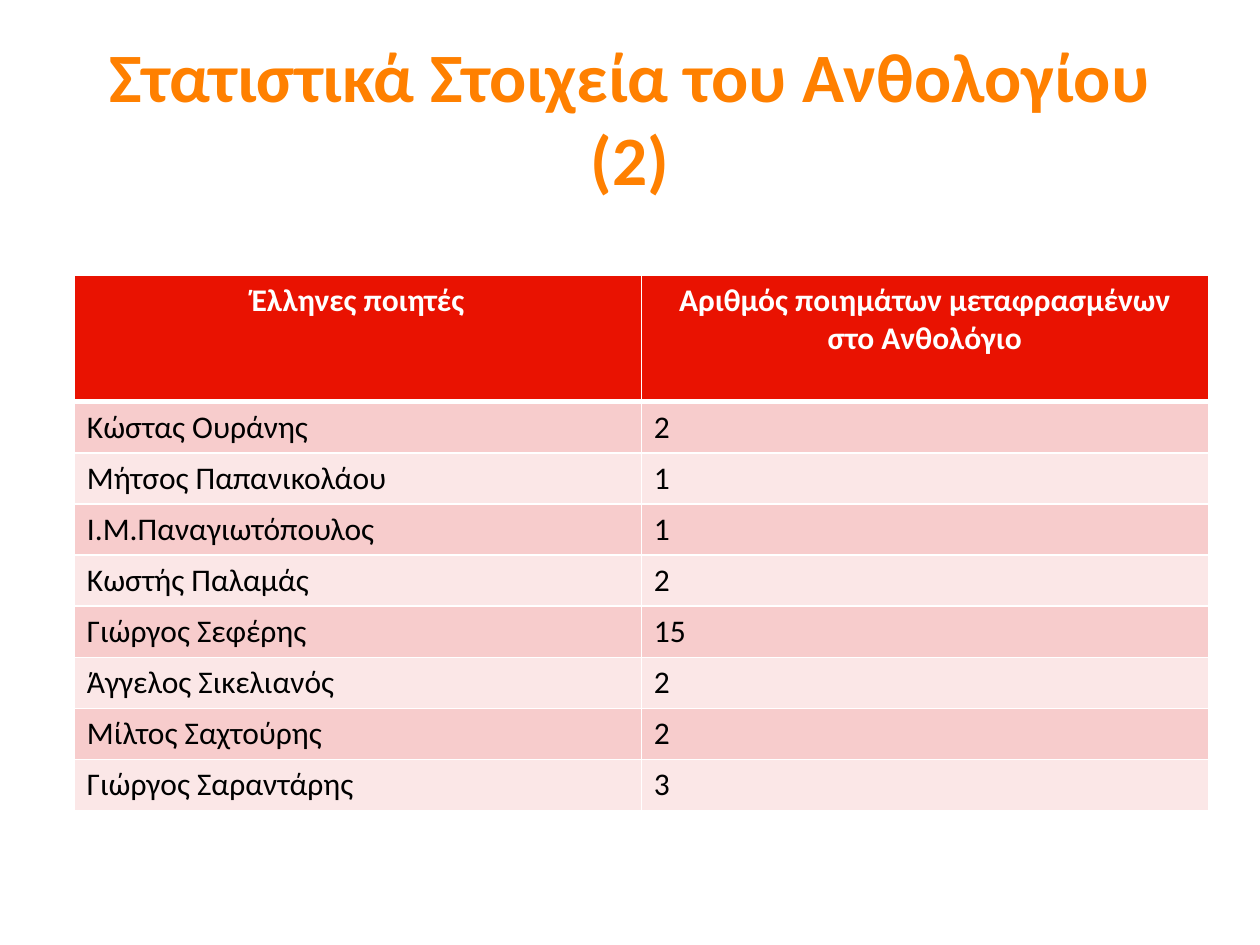
from lxml import etree
from pptx import Presentation
from pptx.dml.color import RGBColor
from pptx.enum.text import MSO_ANCHOR, PP_ALIGN
from pptx.oxml.ns import qn
from pptx.util import Pt

CENTER, LEFT = PP_ALIGN.CENTER, PP_ALIGN.LEFT
MIDDLE = MSO_ANCHOR.MIDDLE
HEADER_HEIGHT, ROW_HEIGHT = 72.6, 29.2
COLUMN_WIDTH = 324
HEADER_FILL = "E91201"
BAND_FILLS = ["FBE7E7", "F7CCCC"]

ROWS = [
    ("Έλληνες ποιητές", "Αριθμός ποιημάτων μεταφρασμένων στο Ανθολόγιο"),
    ("Κώστας Ουράνης", "2"),
    ("Μήτσος Παπανικολάου", "1"),
    ("Ι.Μ.Παναγιωτόπουλος", "1"),
    ("Κωστής Παλαμάς", "2"),
    ("Γιώργος Σεφέρης", "15"),
    ("Άγγελος Σικελιανός", "2"),
    ("Μίλτος Σαχτούρης", "2"),
    ("Γιώργος Σαραντάρης", "3"),
]


def write_text(text_frame, text, color, alignment, **font_format):
    text_frame.word_wrap = True
    paragraph = text_frame.paragraphs[0]
    paragraph.alignment = alignment
    run = paragraph.add_run()
    run.text = text
    run.font.color.rgb = RGBColor.from_string(color)
    for name, value in {"name": "Calibri", **font_format}.items():
        setattr(run.font, name, value)


def add_borders(cell, widths):
    """Draw white borders; widths maps a side (L, R, T, B) to points."""
    properties = cell._tc.get_or_add_tcPr()
    for position, (side, width) in enumerate(widths.items()):
        line = etree.Element(qn(f"a:ln{side}"), w=str(Pt(width)))
        fill = etree.SubElement(line, qn("a:solidFill"))
        etree.SubElement(fill, qn("a:srgbClr"), val="FFFFFF")
        properties.insert(position, line)


presentation = Presentation()
presentation.slide_width, presentation.slide_height = Pt(720), Pt(540)
slide = presentation.slides.add_slide(presentation.slide_layouts[6])

table_height = HEADER_HEIGHT + ROW_HEIGHT * (len(ROWS) - 1)
table = slide.shapes.add_table(
    len(ROWS), 2, Pt(42.5), Pt(157), Pt(2 * COLUMN_WIDTH), Pt(table_height)
).table
for column in table.columns:
    column.width = Pt(COLUMN_WIDTH)

for row_index, values in enumerate(ROWS):
    is_header = row_index == 0
    table.rows[row_index].height = Pt(HEADER_HEIGHT if is_header else ROW_HEIGHT)
    fill_color = HEADER_FILL if is_header else BAND_FILLS[row_index % 2]
    for column_index, value in enumerate(values):
        cell = table.cell(row_index, column_index)
        cell.fill.solid()
        cell.fill.fore_color.rgb = RGBColor.from_string(fill_color)
        write_text(
            cell.text_frame,
            value,
            "FFFFFF" if is_header else "000000",
            CENTER if is_header else LEFT,
            size=Pt(18),
            bold=is_header,
        )
        top, bottom = 3 if row_index == 1 else 1, 3 if is_header else 1
        add_borders(cell, {"L": 1, "R": 1, "T": top, "B": bottom})

title = slide.shapes.add_textbox(Pt(36), Pt(21.6), Pt(648), Pt(90))
title.text_frame.vertical_anchor = MIDDLE
write_text(
    title.text_frame,
    "Στατιστικά Στοιχεία του Ανθολογίου (2)",
    "FF8000",
    CENTER,
    size=Pt(39.6),
    bold=True,
)

presentation.save("out.pptx")
